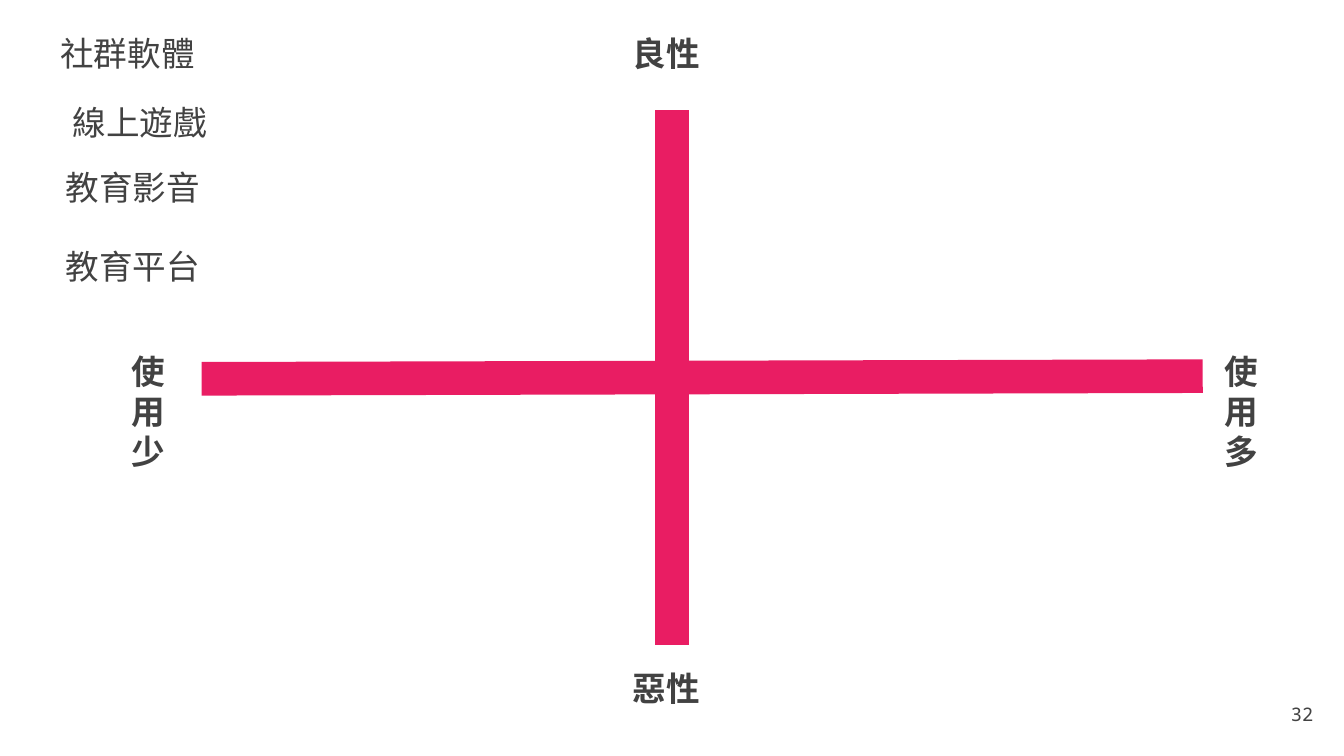
from dataclasses import dataclass

import lxml.etree
import pptx
import pptx.dml.color
import pptx.enum.shapes
import pptx.enum.text
import pptx.oxml.ns
import pptx.util

Cm = pptx.util.Cm
Pt = pptx.util.Pt
Align = pptx.enum.text.PP_ALIGN
Anchor = pptx.enum.text.MSO_ANCHOR
AutoSize = pptx.enum.text.MSO_AUTO_SIZE
qualified = pptx.oxml.ns.qn

FONT = "Noto Sans Mono"
INK = "424242"
PINK = "E91D63"


@dataclass
class Label:
    text: str
    left: float
    top: float
    width: float
    height: float
    size: int = 18
    bold: bool = False
    grow: bool = False
    align: Align = Align.LEFT
    anchor: Anchor = Anchor.TOP


@dataclass
class Axis:
    start_x: float
    start_y: float
    end_x: float
    end_y: float


def colour(value: str) -> pptx.dml.color.RGBColor:
    return pptx.dml.color.RGBColor.from_string(value)


def apply(target: object, formats: dict) -> None:
    for name, value in formats.items():
        setattr(target, name, value)


def draw_label(page, label: Label) -> None:
    box = page.shapes.add_textbox(
        Cm(label.left), Cm(label.top), Cm(label.width), Cm(label.height)
    )
    frame = box.text_frame
    margins = {f"margin_{side}": Cm(0.25) for side in ("left", "top", "right", "bottom")}
    fit = AutoSize.SHAPE_TO_FIT_TEXT if label.grow else AutoSize.NONE
    apply(frame, {**margins, "word_wrap": True, "auto_size": fit,
                  "vertical_anchor": label.anchor})
    para = frame.paragraphs[0]
    para.alignment = label.align
    span = para.add_run()
    span.text = label.text
    apply(span.font, {"name": FONT, "size": Pt(label.size), "bold": label.bold})
    span.font.color.rgb = colour(INK)
    east_asian = lxml.etree.Element(qualified("a:ea"), typeface=FONT)
    span.font._element.find(qualified("a:latin")).addnext(east_asian)


def draw_axis(page, axis: Axis) -> None:
    line = page.shapes.add_connector(
        pptx.enum.shapes.MSO_CONNECTOR.STRAIGHT,
        Cm(axis.start_x), Cm(axis.start_y), Cm(axis.end_x), Cm(axis.end_y),
    )
    line.line.width = Pt(18)
    line.line.color.rgb = colour(PINK)
    lxml.etree.SubElement(line._element.spPr, qualified("a:effectLst"))


AXES = [Axis(3.81, 7.16, 22.73, 7.11), Axis(12.7, 12.19, 12.7, 2.08)]

PAGE_NUMBER = Label("32", 23.55, 12.95, 1.52, 1.09, size=10,
                    align=Align.RIGHT, anchor=Anchor.MIDDLE)

USAGE_ENDS = [
    Label(text, left, 6.38, 1.24, 1.52, bold=True)
    for text, left in (("使用少", 2.24), ("使用多", 22.89))
]

NATURE_ENDS = [
    Label(text, 11.71, top, 1.98, 1.52, bold=True)
    for text, top in (("良性", 0.38), ("惡性", 12.37))
]

CATEGORIES = [
    Label(text, left, top, 3.15, 1.27, grow=True)
    for text, left, top in (
        ("社群軟體", 0.89, 0.38),
        ("線上遊戲", 1.12, 1.68),
        ("教育影音", 0.99, 2.9),
        ("教育平台", 0.99, 4.39),
    )
]


def main() -> None:
    deck = pptx.Presentation()
    apply(deck, {"slide_width": Cm(25.4), "slide_height": Cm(14.29)})
    page = deck.slides.add_slide(deck.slide_layouts[6])
    for axis in AXES:
        draw_axis(page, axis)
    for label in [PAGE_NUMBER, *USAGE_ENDS, *NATURE_ENDS, *CATEGORIES]:
        draw_label(page, label)
    deck.save("out.pptx")


if __name__ == "__main__":
    main()
